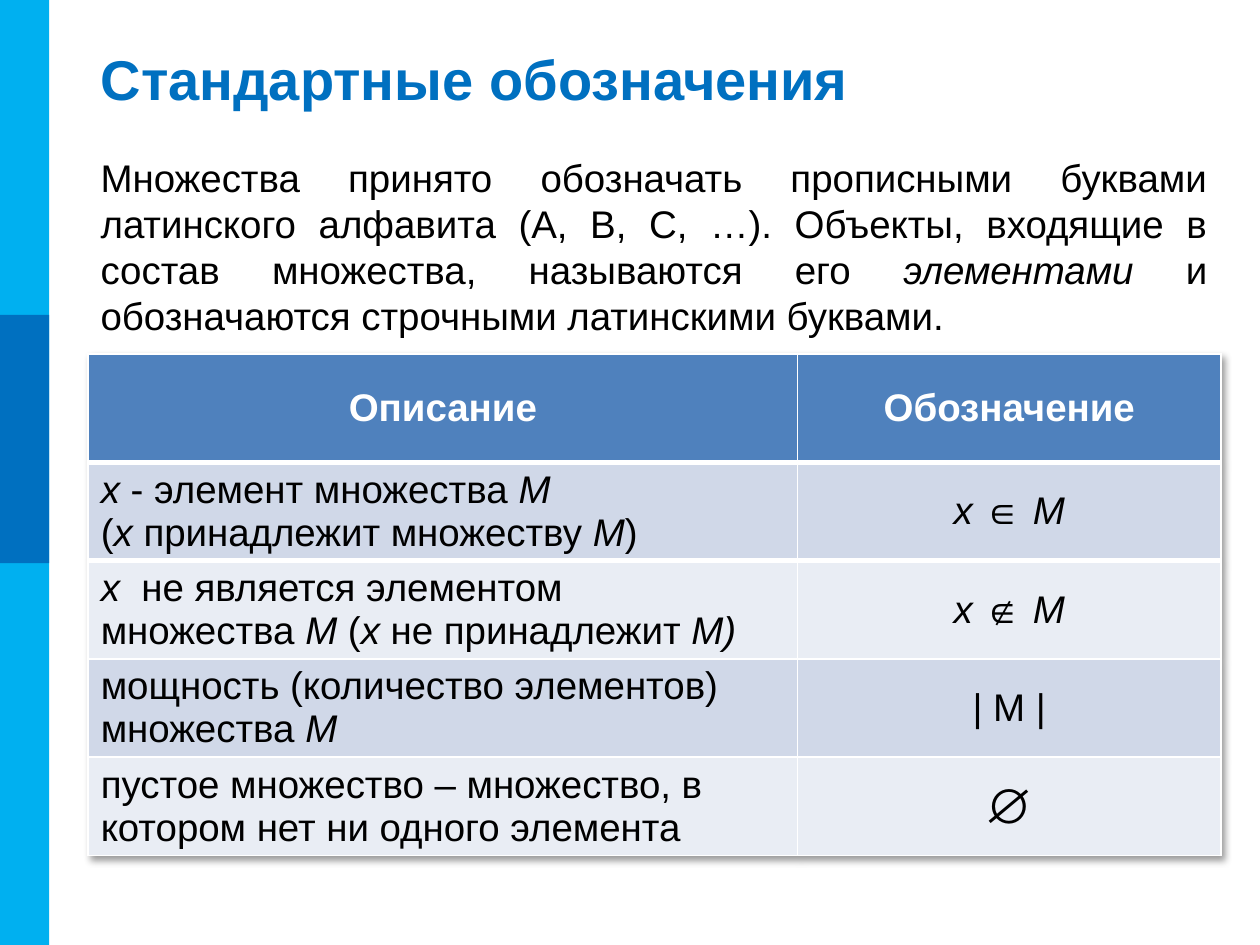
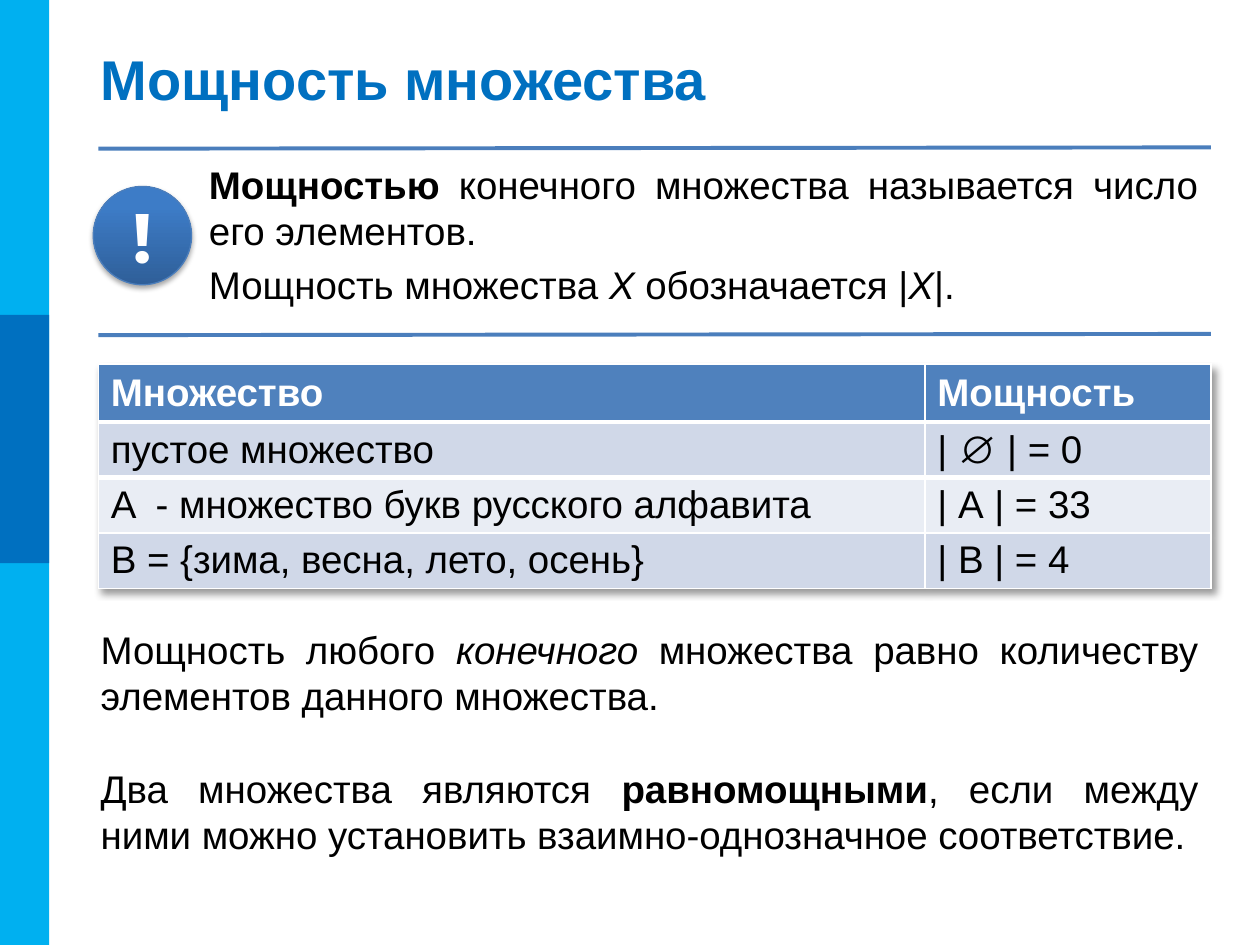
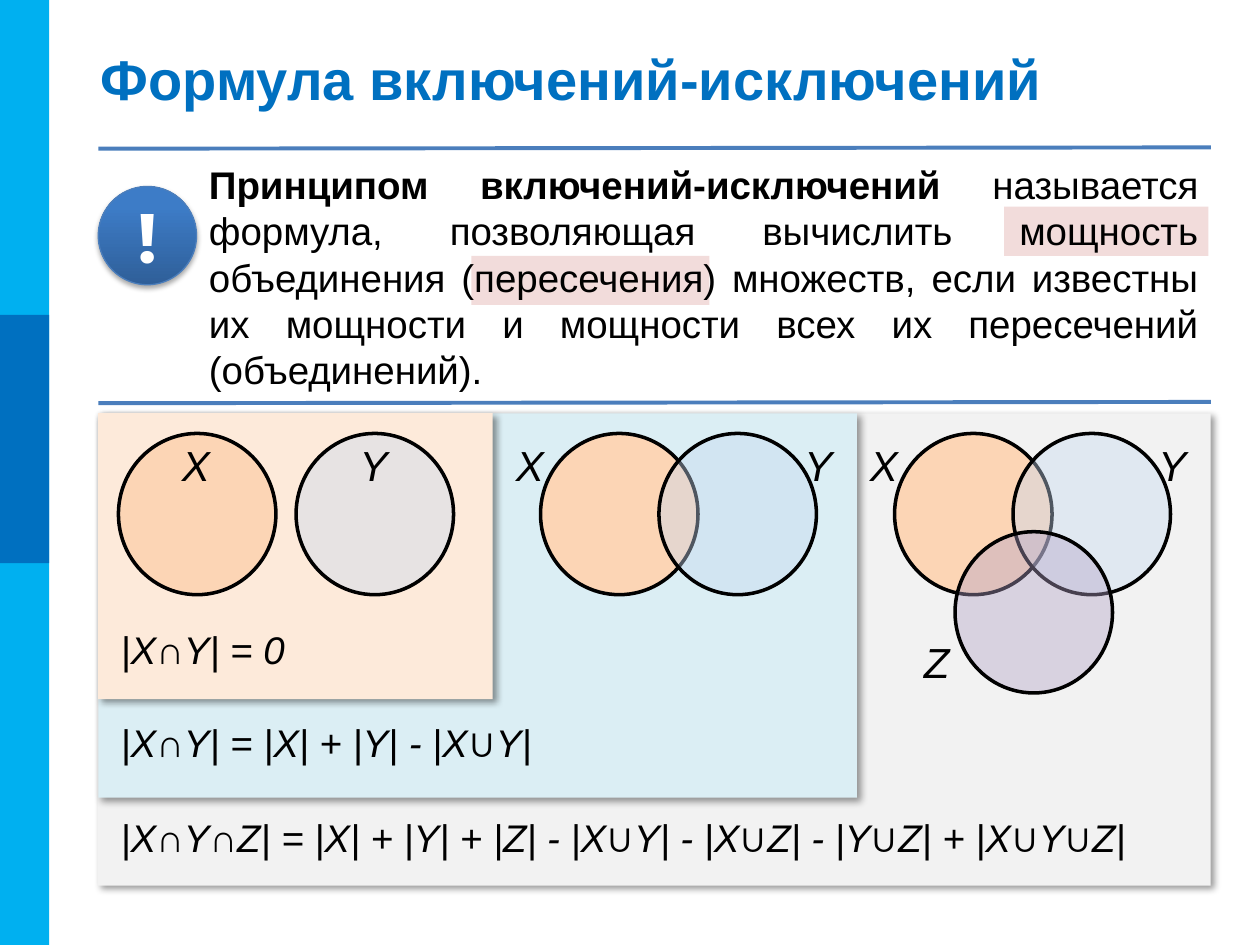
from lxml import etree
from pptx import Presentation
from pptx.dml.color import RGBColor
from pptx.enum.shapes import MSO_CONNECTOR, MSO_SHAPE
from pptx.enum.text import MSO_ANCHOR, PP_ALIGN
from pptx.oxml.ns import qn
from pptx.util import Inches, Pt

RECT, OVAL, CHORD = MSO_SHAPE.RECTANGLE, MSO_SHAPE.OVAL, MSO_SHAPE.CHORD
STRAIGHT = MSO_CONNECTOR.STRAIGHT
LEFT, CENTER, JUSTIFY = PP_ALIGN.LEFT, PP_ALIGN.CENTER, PP_ALIGN.JUSTIFY
MIDDLE = MSO_ANCHOR.MIDDLE

COLORS = {
    "sky": "00B0F0", "blue": "0070C0", "rule": "4B7EBC",
    "black": "000000", "white": "FFFFFF",
    "header": "4F81BD", "band": "D0D8E8", "band_light": "E9EDF4",
    "badge_dark": "2F5F99", "badge_light": "3D7CC7", "mark": "F2DCDB",
    "gray": "F2F2F2", "aqua": "DBEEF4", "peach": "FDEADA",
    "set_x": "FCD5B5", "set_y": "C6D9F1", "set_z": "B3A2C7",
}
RGB = {name: RGBColor.from_string(value) for name, value in COLORS.items()}


def write(tf, text, size=22, color="black", bold=False, align=LEFT,
          font="Arial", spacing=None, before=0):
    tf.word_wrap = True
    for n, line in enumerate(text.split("¶")):
        p = tf.add_paragraph() if n else tf.paragraphs[0]
        p.alignment = align
        p.line_spacing = spacing
        p.space_before = Pt(before)
        for i, slanted in enumerate(line.split("*")):
            for b, weighted in enumerate(slanted.split("_")):
                for k, piece in enumerate(weighted.split("\n")):
                    if k:
                        p.add_line_break()
                    if piece:
                        r = p.add_run()
                        r.text = piece
                        r.font.name = font
                        r.font.size = Pt(size)
                        r.font.bold = bold or b % 2 == 1
                        r.font.italic = i % 2 == 1
                        r.font.color.rgb = RGB[color]


def add_shadow(effects, blur=4, dist=3, angle=45, alpha=40):
    shadow = etree.SubElement(
        effects, qn("a:outerShdw"), blurRad=str(Pt(blur)), dist=str(Pt(dist)),
        dir=str(angle * 60000), rotWithShape="0")
    clr = etree.SubElement(shadow, qn("a:srgbClr"), val=COLORS["black"])
    etree.SubElement(clr, qn("a:alpha"), val=str(alpha * 1000))


prs = Presentation()
prs.slide_width, prs.slide_height = Inches(10), Inches(7.5)

slides = []
for title in ("Стандартные обозначения", "Мощность множества",
              "Формула включений-исключений"):
    s = prs.slides.add_slide(prs.slide_layouts[6])
    slides.append(s)
    for top, height, color in ((0, 7.5, "sky"), (2.5, 1.97, "blue")):
        sp = s.shapes.add_shape(RECT, 0, Inches(top), Inches(0.39), Inches(height))
        sp.shadow.inherit = False
        sp.fill.solid()
        sp.fill.fore_color.rgb = RGB[color]
        sp.line.fill.background()
    tf = s.shapes.add_textbox(Inches(0.7), Inches(0.3), Inches(9.02), Inches(0.64)).text_frame
    tf.vertical_anchor = MIDDLE
    write(tf, title, size=32, color="blue", bold=True, spacing=1.0)
notation, power, formula = slides

for left, top, width in ((3.74, 2.03, 1.89), (7.97, 1.64, 1.62)):
    sp = formula.shapes.add_shape(RECT, Inches(left), Inches(top), Inches(width), Inches(0.39))
    sp.shadow.inherit = False
    sp.fill.solid()
    sp.fill.fore_color.rgb = RGB["mark"]
    sp.line.fill.background()

paragraphs = [
    (notation, 0.7, 1.17, 8.98, 1.64,
     "Множества принято обозначать прописными буквами латинского алфавита (A, B, C, …). "
     "Объекты, входящие в состав множества, называются его *элементами* и обозначаются "
     "строчными латинскими буквами."),
    (power, 1.56, 1.23, 8.05, 1.43,
     "_Мощностью _конечного множества называется число его элементов.¶"
     "Мощность множества *X* обозначается |*X*|."),
    (power, 0.7, 4.92, 8.91, 0.84,
     "Мощность любого *конечного* множества равно количеству элементов данного множества."),
    (power, 0.7, 6.02, 8.91, 0.84,
     "Два множества являются _равномощными_, если между ними можно установить "
     "взаимно-однозначное соответствие."),
    (formula, 1.56, 1.23, 8.05, 1.98,
     "_Принципом включений-исключений _называется формула, позволяющая вычислить мощность "
     "объединения (пересечения) множеств, если известны их мощности и мощности всех их "
     "пересечений (объединений)."),
]
for s, left, top, width, height, text in paragraphs:
    tb = s.shapes.add_textbox(Inches(left), Inches(top), Inches(width), Inches(height))
    write(tb.text_frame, text, align=JUSTIFY, before=4.4)

for s, badge_left, bottom in ((power, 0.74, 2.66), (formula, 0.78, 3.2)):
    sp = s.shapes.add_shape(OVAL, Inches(badge_left), Inches(1.48), Inches(0.78), Inches(0.78))
    sp.shadow.inherit = False
    sp.fill.gradient()
    sp.fill.gradient_angle = 90
    dark, light = sp.fill.gradient_stops
    dark.color.rgb, light.color.rgb = RGB["badge_dark"], RGB["badge_light"]
    dark.position, light.position = 0, 0.8
    sp.line.color.rgb = RGB["rule"]
    sp.line.width = Pt(0.75)
    add_shadow(sp._element.spPr.find(qn("a:effectLst")), 3.1, 1.8, 90, 35)
    sp.text_frame.vertical_anchor = MIDDLE
    write(sp.text_frame, "!", size=40, color="white", bold=True, align=CENTER,
          font="Montserrat", spacing=1.0)
    for y in (1.18, bottom):
        line = s.shapes.add_connector(STRAIGHT, Inches(0.78), Inches(y), Inches(9.61), Inches(y - 0.01))
        line.line.color.rgb = RGB["rule"]
        line.line.width = Pt(2.25)
        etree.SubElement(line._element.spPr, qn("a:effectLst"))

tables = [
    (notation, 0.7, 2.81, (5.63, 3.36), 0.86, 0.78, CENTER, [
        ("Описание", "Обозначение"),
        ("*x* - элемент множества *M*\n(*x *принадлежит множеству *M*)", "*x *∈ *M*"),
        ("*x*  не является элементом \nмножества *М* (*x *не принадлежит *M)*", "*x *∉ *M*"),
        ("мощность (количество элементов) \nмножества *М*", "| M |"),
        ("пустое множество – множество, в котором нет ни одного элемента", "∅"),
    ]),
    (power, 0.78, 2.89, (6.56, 2.27), 0.46, 0.44, LEFT, [
        ("Множество", "Мощность"),
        ("пустое множество", "| ∅ | = 0"),
        ("A  - множество букв русского алфавита", "| А | = 33"),
        ("В = {зима, весна, лето, осень}", "| В | = 4"),
    ]),
]
for s, left, top, widths, head_height, row_height, align, rows in tables:
    height = head_height + row_height * (len(rows) - 1)
    table = s.shapes.add_table(len(rows), 2, Inches(left), Inches(top),
                               Inches(sum(widths)), Inches(height)).table
    effects = etree.Element(qn("a:effectLst"))
    table._tbl.tblPr.insert(0, effects)
    add_shadow(effects)
    for c, width in enumerate(widths):
        table.columns[c].width = Inches(width)
    for n, row in enumerate(rows):
        table.rows[n].height = Inches(row_height if n else head_height)
        for c, text in enumerate(row):
            cell = table.cell(n, c)
            cell.vertical_anchor = MIDDLE
            cell.margin_top = cell.margin_bottom = Inches(0.02)
            cell.fill.solid()
            cell.fill.fore_color.rgb = RGB[("band_light", "band")[n % 2] if n else "header"]
            if n < 2:
                border = etree.Element(qn("a:lnT" if n else "a:lnB"), w=str(Pt(3)))
                fill = etree.SubElement(border, qn("a:solidFill"))
                etree.SubElement(fill, qn("a:srgbClr"), val=COLORS["white"])
                cell._tc.tcPr.insert(0, border)
            write(cell.text_frame, text, size=28 if text == "∅" else 22,
                  color="black" if n else "white", bold=n == 0,
                  align=LEFT if n and c == 0 else align, spacing=1.0)

panels = [
    (8.83, 3.75, "gray", 6.41, 8.44,
     "*|X*∩*Y*∩*Z| = |X| + |Y| + |Z| - |X*∪*Y| - |X*∪*Z| - |Y*∪*Z| + |X*∪*Y*∪*Z|*",
     [("X", 7.1, 3.44, 6.56, 3.44), ("Y", 8.04, 3.44, 8.85, 3.44), ("Z", 7.58, 4.22, 6.98, 5)]),
    (6.02, 3.05, "aqua", 5.66, 3.49, "*|X*∩*Y| = |X| + |Y| - |X*∪*Y|*",
     [("X", 4.29, 3.44, 3.75, 3.44), ("Y", 5.23, 3.44, 6.04, 3.44)]),
    (3.13, 2.27, "peach", 4.92, 2.42, "*|X*∩*Y| = 0*",
     [("X", 0.94, 3.44, 1.1, 3.44), ("Y", 2.35, 3.44, 2.51, 3.44)]),
]
set_fills = {"X": ("set_x", 100), "Y": ("set_y", 40), "Z": ("set_z", 40)}
for width, height, color, text_top, text_width, text, circles in panels:
    sp = formula.shapes.add_shape(RECT, Inches(0.78), Inches(3.28), Inches(width), Inches(height))
    sp.shadow.inherit = False
    sp.fill.solid()
    sp.fill.fore_color.rgb = RGB[color]
    sp.line.fill.background()
    add_shadow(sp._element.spPr.find(qn("a:effectLst")))
    tb = formula.shapes.add_textbox(Inches(0.86), Inches(text_top), Inches(text_width), Inches(0.47))
    write(tb.text_frame, text)
    for name, left, top, label_left, label_top in circles:
        fill, alpha = set_fills[name]
        sp = formula.shapes.add_shape(CHORD, Inches(left), Inches(top), Inches(1.25), Inches(1.28))
        sp.adjustments[0], sp.adjustments[1] = 16.2, 15.65
        sp.shadow.inherit = False
        sp.fill.solid()
        sp.fill.fore_color.rgb = RGB[fill]
        clr = sp._element.spPr.find(qn("a:solidFill"))[0]
        etree.SubElement(clr, qn("a:alpha"), val=str(alpha * 1000))
        sp.line.color.rgb = RGB["black"]
        sp.line.width = Pt(2)
        tb = formula.shapes.add_textbox(Inches(label_left), Inches(label_top), Inches(0.91), Inches(0.44))
        write(tb.text_frame, f"*{name}*", size=24, align=CENTER)

prs.save("out.pptx")
